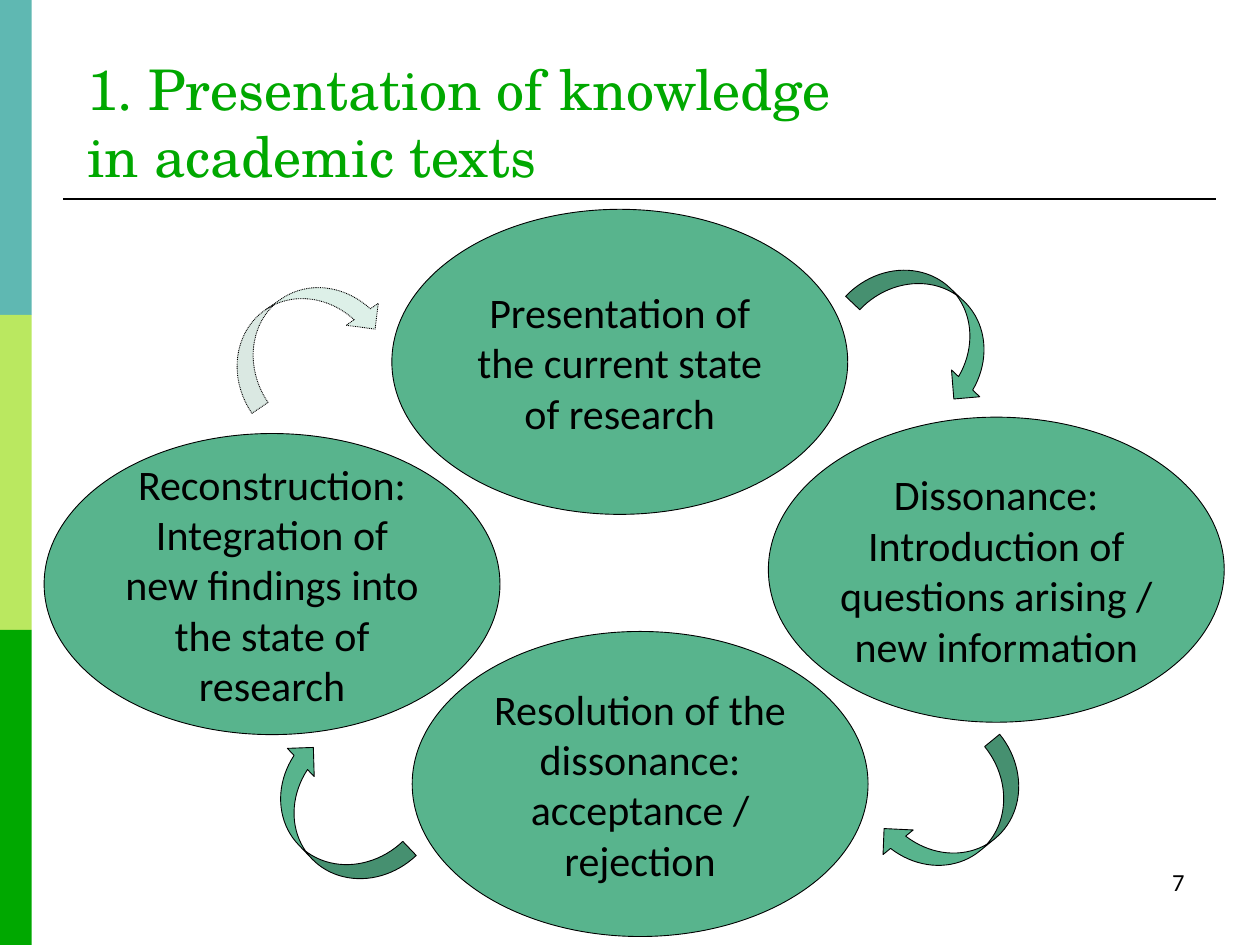
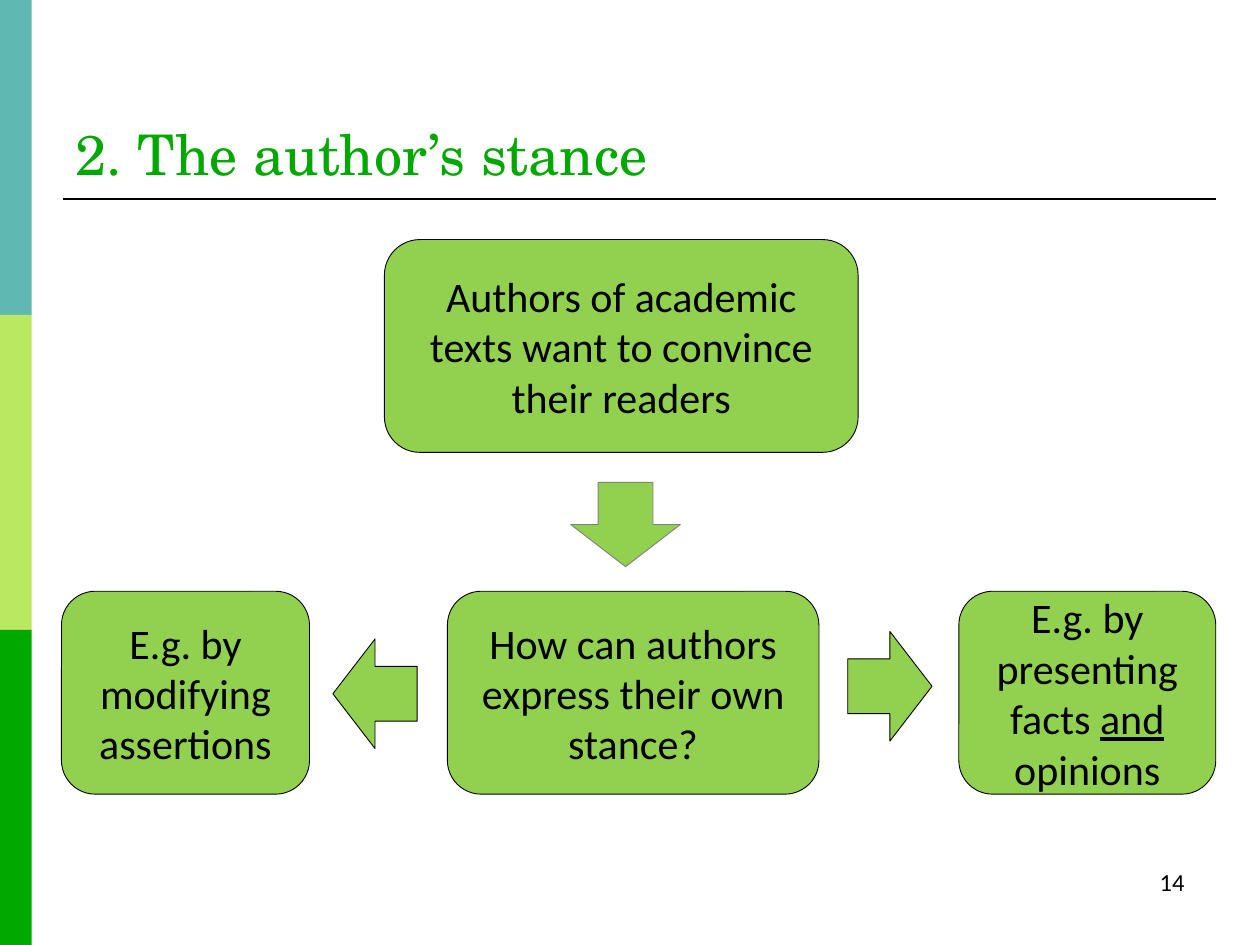
from lxml import etree
from pptx import Presentation
from pptx.dml.color import RGBColor
from pptx.enum.dml import MSO_LINE
from pptx.enum.shapes import MSO_CONNECTOR, MSO_SHAPE
from pptx.enum.text import MSO_ANCHOR, MSO_AUTO_SIZE, PP_ALIGN
from pptx.oxml.ns import qn
from pptx.util import Cm, Pt

RECT, ELLIPSE = MSO_SHAPE.RECTANGLE, MSO_SHAPE.OVAL
ROUND_RECT, ARROW = MSO_SHAPE.ROUNDED_RECTANGLE, MSO_SHAPE.RIGHT_ARROW
CURVED_ARROW = MSO_SHAPE.CURVED_DOWN_ARROW
STRAIGHT, DOTTED = MSO_CONNECTOR.STRAIGHT, MSO_LINE.ROUND_DOT
LEFT, CENTER, RIGHT = PP_ALIGN.LEFT, PP_ALIGN.CENTER, PP_ALIGN.RIGHT
MIDDLE, BOTTOM = MSO_ANCHOR.MIDDLE, MSO_ANCHOR.BOTTOM
NO_FIT = MSO_AUTO_SIZE.NONE

TEAL = RGBColor(0x5F, 0xB8, 0xB2)
LIME = RGBColor(0xBA, 0xE8, 0x60)
GREEN = RGBColor(0x00, 0xA8, 0x00)
SEA = RGBColor(0x58, 0xB4, 0x8D)
LEAF = RGBColor(0x92, 0xD0, 0x50)
GREY = RGBColor(0x80, 0x80, 0x80)
BLACK = RGBColor(0, 0, 0)

TITLE_FONT = {"name": "TeX Gyre Schola", "size": Pt(32)}
BODY_FONT = {"name": "Calibri", "size": Pt(24)}
PAGE_FONT = {"name": "Calibri", "size": Pt(14)}

# Boxes are (left, top, width, height) in cm
CYCLE_BOX = (0.89, 4.22, 23.8, 14.66)
FLOW_BOX = (1.24, 4.83, 23.27, 11.18)
PAGE_BOX = (18.21, 17.35, 5.92, 1.27)


def apply(target, values):
    for name, value in values.items():
        setattr(target, name, value)


def within(box, left, top, width, height):
    """Turn a position relative to a box into slide lengths."""
    return [Cm(v) for v in (box[0] + left, box[1] + top, width, height)]


def write(tf, runs, font, color, align):
    """Write (text, underline) runs as one paragraph."""
    p = tf.paragraphs[0]
    p.alignment = align
    for text, underline in runs:
        r = p.add_run()
        r.text = text
        apply(r.font, font)
        r.font.color.rgb = color
        if underline:
            r.font.underline = True


def add_filled(slide, kind, place, fill, line=BLACK, rotation=0):
    sp = slide.shapes.add_shape(kind, *place)
    sp.shadow.inherit = False
    sp.fill.solid()
    sp.fill.fore_color.rgb = fill
    if line is None:
        sp.line.fill.background()
    else:
        sp.line.color.rgb = line
        sp.line.width = Pt(0.5)
    sp.rotation = rotation
    return sp


def add_node(slide, kind, place, fill, runs, side_inset=0.25):
    sp = add_filled(slide, kind, place, fill)
    apply(sp.text_frame, {"word_wrap": True, "vertical_anchor": MIDDLE,
                          "margin_left": Cm(side_inset), "margin_right": Cm(side_inset)})
    write(sp.text_frame, runs, BODY_FONT, BLACK, CENTER)


def set_master(prs, slide):
    """Draw the side bands and title rule, then move them to the master."""
    band = prs.slide_height / 3
    parts = []
    for i, color in enumerate((TEAL, LIME, GREEN)):
        place = (0, int(i * band), Cm(0.64), int(band))
        parts.append(add_filled(slide, RECT, place, color, None))
    rule = slide.shapes.add_connector(STRAIGHT, Cm(1.27), Cm(4.01), Cm(24.51), Cm(4.01))
    rule.line.color.rgb = BLACK
    rule.line.width = Pt(1.5)
    etree.SubElement(rule.element.spPr, qn("a:effectLst"))
    for number, part in enumerate(parts + [rule], start=101):
        part.element.xpath(".//p:cNvPr")[0].set("id", str(number))
        prs.slide_master.shapes.element.append(part.element)


def add_titled_slide(prs, title, title_box, page):
    slide = prs.slides.add_slide(prs.slide_layouts[5])
    sp = slide.shapes.title
    apply(sp, dict(zip(("left", "top", "width", "height"), map(Cm, title_box))))
    apply(sp.text_frame, {"word_wrap": True, "auto_size": NO_FIT, "vertical_anchor": BOTTOM})
    write(sp.text_frame, [(title, False)], TITLE_FONT, GREEN, LEFT)
    # Page number
    tf = slide.shapes.add_textbox(*map(Cm, PAGE_BOX)).text_frame
    tf.word_wrap = True
    write(tf, [(page, False)], PAGE_FONT, BLACK, RIGHT)
    return slide


def add_cycle(slide, box):
    """Four stages, clockwise from the top, with arrows between them."""
    stages = [
        (7.01, 0, 6.15, 0.25, "Presentation of the current state of research"),
        (14.6, 4.19, 6.15, 0, "Dissonance: Introduction of questions arising / new information"),
        (7.42, 8.51, 6.15, 0.25, "Resolution of the dissonance: acceptance / rejection"),
        (0, 4.52, 6.07, 0.25,
         "Reconstruction: Integration of new findings into the state of research"),
    ]
    for left, top, height, inset, text in stages:
        place = within(box, left, top, 9.19, height)
        add_node(slide, ELLIPSE, place, SEA, [(text, False)], inset)

    arrows = [(16.23, 1.57, 43.5), (16.74, 11.48, 140.8),
              (4.06, 11.55, 226.4), (3.45, 1.72, 325.6)]
    for left, top, angle in arrows:
        arrow = add_filled(slide, CURVED_ARROW, within(box, left, top, 3.4, 1.57),
                           SEA, rotation=angle)
    # The arrow that closes the cycle is faint and dotted
    arrow.line.dash_style = DOTTED
    color = arrow.element.xpath("./p:spPr/a:solidFill/a:srgbClr")[0]
    etree.SubElement(color, qn("a:alpha"), val="20000")


def add_flow(slide, box):
    """A claim leading to a question, with one answer on each side."""
    row_top, row_height = 7.09, 4.09
    claim = "Authors of academic texts want to convince their readers"
    add_node(slide, ROUND_RECT, within(box, 6.51, 0, 9.55, 4.29), LEAF, [(claim, False)])
    row = [
        (0, 5, [("E.g. by modifying assertions", False)]),
        (7.78, 7.49, [("How can authors express their own stance?", False)]),
        (18.09, 5.18, [("E.g. by presenting facts ", False), ("and", True),
                       (" opinions", False)]),
    ]
    for left, width, runs in row:
        add_node(slide, ROUND_RECT, within(box, left, row_top, width, row_height), LEAF, runs)

    arrows = [(5.47, 8.05, 180, BLACK), (10.52, 4.64, 90, GREY), (15.85, 7.9, 0, BLACK)]
    for left, top, angle, line in arrows:
        add_filled(slide, ARROW, within(box, left, top, 1.7, 2.21), LEAF, line, angle)


def main():
    prs = Presentation()
    prs.slide_width, prs.slide_height = Cm(25.4), Cm(19.05)

    slide = add_titled_slide(prs, "1. Presentation of knowledge in academic texts",
                             (1.5, 0.76, 15.52, 3.18), "7")
    set_master(prs, slide)
    add_cycle(slide, CYCLE_BOX)

    slide = add_titled_slide(prs, "2. The author’s stance", (1.27, 0.71, 16.15, 3.18), "14")
    add_flow(slide, FLOW_BOX)

    prs.save("out.pptx")


if __name__ == "__main__":
    main()
